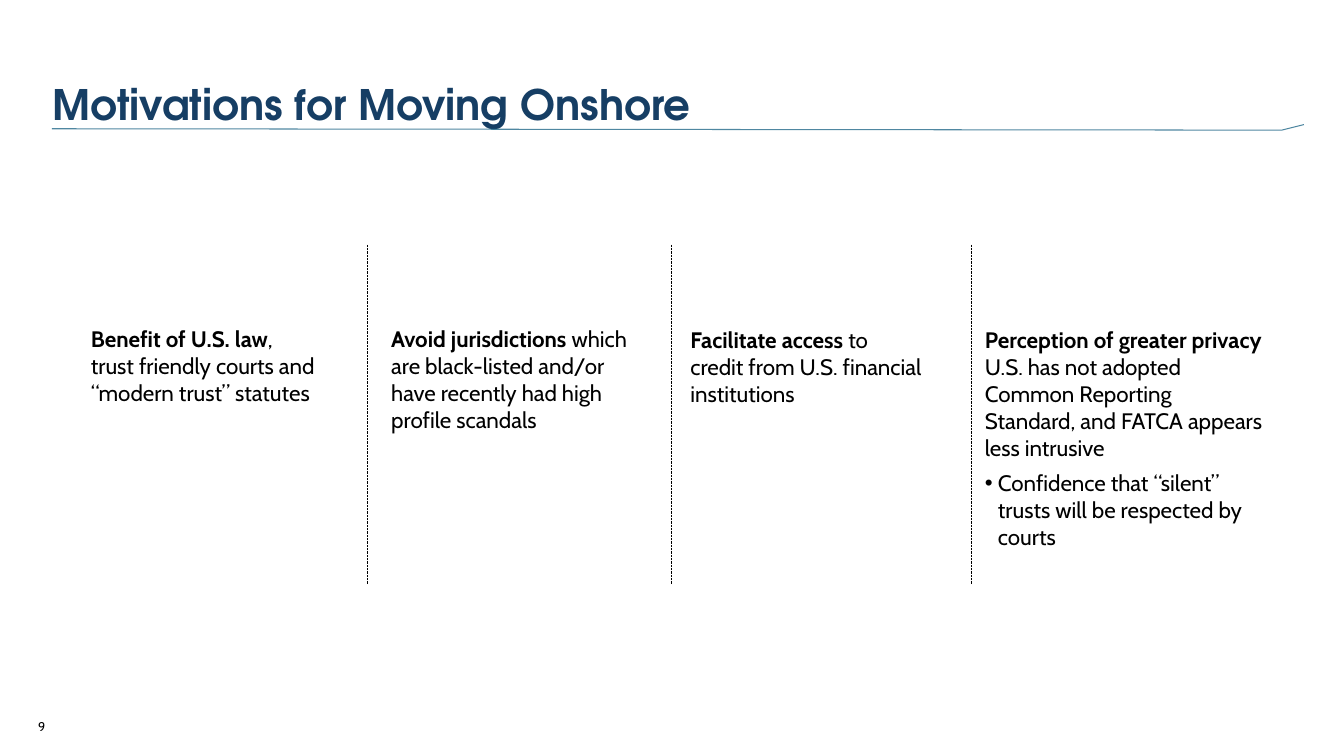
from lxml.etree import SubElement
from pptx import Presentation
from pptx.dml.color import RGBColor
from pptx.enum.dml import MSO_LINE
from pptx.enum.shapes import MSO_CONNECTOR
from pptx.enum.text import MSO_ANCHOR, MSO_AUTO_SIZE, PP_ALIGN
from pptx.oxml.ns import qn
from pptx.util import Cm, Pt

COLORS = {"title": "163E64", "rule": "156082", "text": "000000"}
BODY_FONT = "Cabin"
TITLE_FONT = "TeX Gyre Adventor"

COLUMNS = [
    ((2.29, 8.2, 6.58, 5.94), [
        [("Benefit of U.S. law", True),
         (", \vtrust friendly courts and “modern trust” statutes", False)],
    ]),
    ((9.86, 8.2, 6.58, 5.94), [
        [("Avoid jurisdictions ", True),
         ("which are black-listed and/or have recently had high profile scandals", False)],
    ]),
    ((17.4, 8.23, 5.85, 5.94), [
        [("Facilitate access ", True),
         ("to credit from U.S. financial institutions", False)],
    ]),
    ((24.82, 8.23, 7, 7.19), [
        [("Perception of greater privacy", True),
         (" U.S. has not adopted Common Reporting Standard, and FATCA appears less intrusive", False)],
        [("Confidence that “silent” trusts will be respected by courts", False)],
    ]),
]
DIVIDERS = [9.25, 16.92, 24.49]


def rgb(name):
    return RGBColor.from_string(COLORS[name])


def prepare_frame(tf, anchor):
    tf.word_wrap = True
    tf.auto_size = MSO_AUTO_SIZE.NONE
    tf.vertical_anchor = anchor
    tf.margin_left = tf.margin_top = tf.margin_right = tf.margin_bottom = 0


def add_run(p, text, font, size, color, bold=False):
    for i, part in enumerate(text.split("\v")):
        if i:
            p.add_line_break()
        r = p.add_run()
        r.text = part
        r.font.name = font
        r.font.size = Pt(size)
        r.font.bold = bold
        r.font.color.rgb = rgb(color)


def add_bullet(p, indent):
    pPr = p._p.get_or_add_pPr()
    pPr.set("marL", str(indent))
    pPr.set("indent", str(-indent))
    SubElement(pPr, qn("a:buFont"), typeface="Arial")
    SubElement(pPr, qn("a:buChar"), char="•")


def add_title(s, box, text):
    sp = s.shapes.title
    sp.left, sp.top, sp.width, sp.height = (Cm(v) for v in box)
    prepare_frame(sp.text_frame, MSO_ANCHOR.BOTTOM)
    p = sp.text_frame.paragraphs[0]
    p.alignment = PP_ALIGN.LEFT
    p.line_spacing = 0.9
    add_run(p, text, TITLE_FONT, 30, "title", True)


def add_title_rule(s, box):
    x, y, w, h = box
    fb = s.shapes.build_freeform(Cm(x), Cm(y + 0.75 * h))
    fb.add_line_segments([(Cm(x + w - 0.56), Cm(y + h)), (Cm(x + w), Cm(y))], close=False)
    sp = fb.convert_to_shape()
    sp.shadow.inherit = False
    sp.fill.background()
    sp.line.width = Pt(0.75)
    sp.line.color.rgb = rgb("rule")
    clr = sp.line._ln.find(".//" + qn("a:srgbClr"))
    SubElement(clr, qn("a:alpha"), val="75000")


def add_column(s, box, paragraphs):
    tf = s.shapes.add_textbox(*(Cm(v) for v in box)).text_frame
    prepare_frame(tf, MSO_ANCHOR.TOP)
    for i, runs in enumerate(paragraphs):
        p = tf.add_paragraph() if i else tf.paragraphs[0]
        p.alignment = PP_ALIGN.LEFT
        p.space_before = Pt(6)
        if i:
            add_bullet(p, Cm(0.33))
        for text, bold in runs:
            add_run(p, text, BODY_FONT, 16, "text", bold)


def add_divider(s, x, top, height):
    line = s.shapes.add_connector(
        MSO_CONNECTOR.STRAIGHT, Cm(x), Cm(top), Cm(x), Cm(top + height))
    line.line.width = Pt(0.5)
    line.line.color.rgb = rgb("text")
    line.line.dash_style = MSO_LINE.ROUND_DOT
    SubElement(line._element.spPr, qn("a:effectLst"))


def add_page_number(s, box, number):
    tf = s.shapes.add_textbox(*(Cm(v) for v in box)).text_frame
    prepare_frame(tf, MSO_ANCHOR.BOTTOM)
    p = tf.paragraphs[0]
    p.alignment = PP_ALIGN.RIGHT
    add_run(p, number, BODY_FONT, 9, "text")


def main():
    prs = Presentation()
    prs.slide_width, prs.slide_height = Cm(33.87), Cm(19.05)
    s = prs.slides.add_slide(prs.slide_layouts[5])
    add_page_number(s, (0.3, 18.01, 0.84, 0.48), "9")
    add_title_rule(s, (1.31, 3.14, 31.55, 0.14))
    add_title(s, (1.32, 0.64, 30.48, 2.62), "Motivations for Moving Onshore")
    for box, paragraphs in COLUMNS:
        add_column(s, box, paragraphs)
    for x in DIVIDERS:
        add_divider(s, x, 6.17, 8.56)
    prs.save("out.pptx")


if __name__ == "__main__":
    main()
